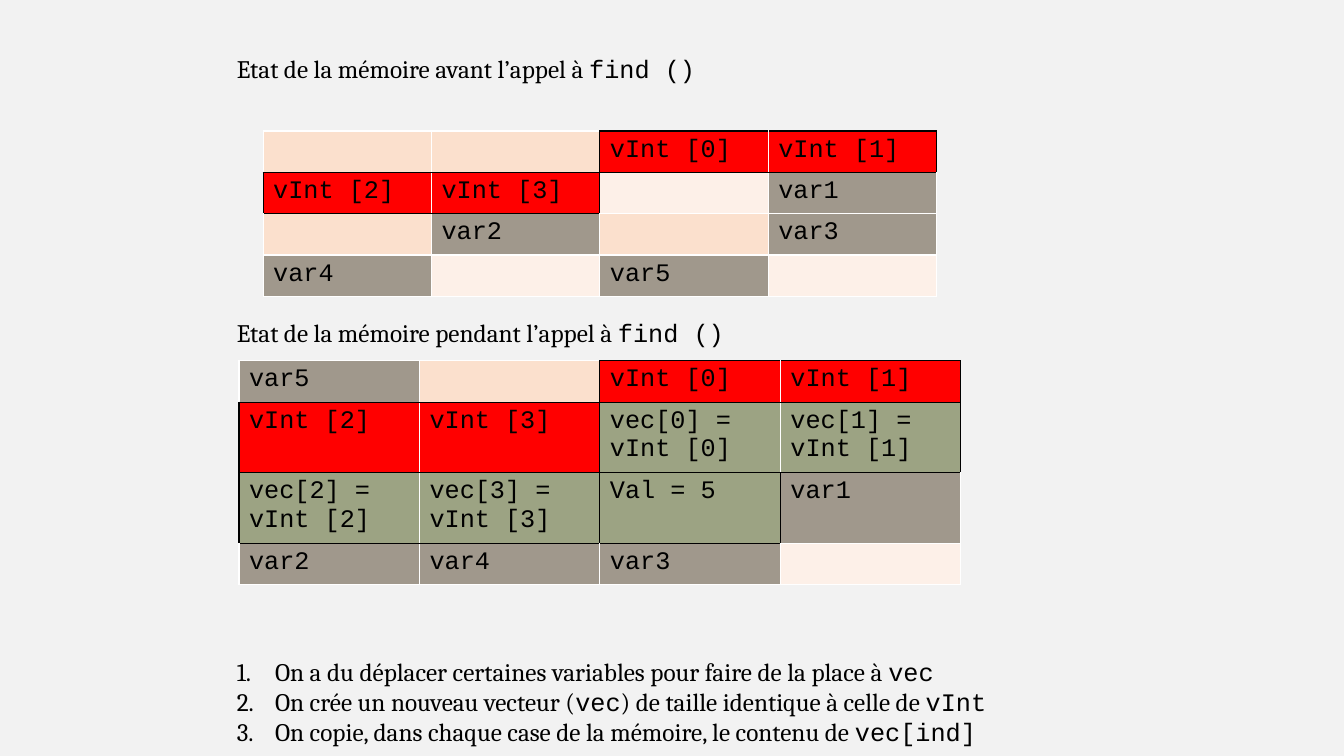
from pptx import Presentation
from pptx.dml.color import RGBColor
from pptx.enum.text import MSO_AUTO_SIZE
from pptx.oxml.ns import qn
from pptx.util import Inches, Pt
from lxml.etree import SubElement

BODY, CODE = "Cambria", "Courier New"
BLACK, WHITE = "000000", "FFFFFF"
EMPTY_FILLS = ("FBE0CD", "FDF0E8")  # alternating rows
GROUP_FILLS = {"vInt": "FF0000", "vec": "9CA383", "Val": "9CA383"}
VARIABLE_FILL = "A0988C"


def color(value):
    return RGBColor.from_string(value)


def group_of(cells, row, column):
    """Name of the outlined memory block a cell belongs to, if any."""
    if not (0 <= row < len(cells) and 0 <= column < len(cells[0])):
        return None
    return next((name for name in GROUP_FILLS if cells[row][column].startswith(name)), None)


class MemorySlide:
    def __init__(self, presentation, size=18):
        self.size = size
        self.slide = presentation.slides.add_slide(presentation.slide_layouts[6])
        self.slide.background.fill.solid()
        self.slide.background.fill.fore_color.rgb = color("F2F2F2")

    def add_run(self, paragraph, text, font):
        run = paragraph.add_run()
        run.text = text
        run.font.name = font
        run.font.size = Pt(self.size)
        run.font.color.rgb = color(BLACK)

    def add_text(self, left, top, width, height, paragraphs, numbered=False):
        """Each paragraph alternates body text and code."""
        shape = self.slide.shapes.add_textbox(
            Inches(left), Inches(top), Inches(width), Inches(height))
        frame = shape.text_frame
        frame.word_wrap = True
        frame.auto_size = MSO_AUTO_SIZE.SHAPE_TO_FIT_TEXT
        for index, texts in enumerate(paragraphs):
            paragraph = frame.add_paragraph() if index else frame.paragraphs[0]
            for position, text in enumerate(texts):
                self.add_run(paragraph, text, (BODY, CODE)[position % 2])
            if numbered:
                self.add_number(paragraph)

    def add_number(self, paragraph):
        properties = paragraph._p.get_or_add_pPr()
        properties.set("marL", str(Inches(0.38)))
        properties.set("indent", str(-Inches(0.38)))
        SubElement(properties, qn("a:buFont"), typeface=BODY)
        SubElement(properties, qn("a:buAutoNum"), type="arabicPeriod")

    def add_border(self, cell, side, value):
        line = SubElement(cell._tc.get_or_add_tcPr(), qn("a:ln" + side), w=str(Pt(1)))
        fill = SubElement(line, qn("a:solidFill"))
        SubElement(fill, qn("a:srgbClr"), val=value)

    def add_memory(self, left, top, column_width, row_heights, cells):
        frame = self.slide.shapes.add_table(
            len(cells), len(cells[0]), Inches(left), Inches(top),
            Inches(column_width * len(cells[0])), Inches(sum(row_heights)))
        table = frame.table
        table.first_row = table.horz_banding = False
        for column in table.columns:
            column.width = Inches(column_width)
        for row, height in zip(table.rows, row_heights):
            row.height = Inches(height)
        for row, texts in enumerate(cells):
            for column, text in enumerate(texts):
                self.fill_cell(table.cell(row, column), cells, row, column, text)

    def fill_cell(self, cell, cells, row, column, text):
        group = group_of(cells, row, column)
        # Black edges wherever two memory blocks meet
        for side, down, right in (("L", 0, -1), ("R", 0, 1), ("T", -1, 0), ("B", 1, 0)):
            neighbour = group_of(cells, row + down, column + right)
            self.add_border(cell, side, WHITE if neighbour == group else BLACK)
        cell.fill.solid()
        fill = GROUP_FILLS.get(group, VARIABLE_FILL) if text else EMPTY_FILLS[row % 2]
        cell.fill.fore_color.rgb = color(fill)
        if text:
            self.add_run(cell.text_frame.paragraphs[0], text, CODE)


def main():
    presentation = Presentation()
    presentation.slide_width = Inches(13.33)
    presentation.slide_height = Inches(7.5)
    memory = MemorySlide(presentation)

    # Memory before the call
    memory.add_text(2.25, 0.48, 7.02, 0.4,
                    [("Etat de la mémoire avant l’appel à ", "find ()")])
    memory.add_memory(2.61, 1.3, 1.67, [0.41] * 4, [
        ["", "", "vInt [0]", "vInt [1]"],
        ["vInt [2]", "vInt [3]", "", "var1"],
        ["", "var2", "", "var3"],
        ["var4", "", "var5", ""],
    ])

    # Memory during the call
    memory.add_text(2.25, 3.1, 7.02, 0.4,
                    [("Etat de la mémoire pendant l’appel à ", "find ()")])
    memory.add_memory(2.37, 3.58, 1.79, [0.41, 0.7, 0.7, 0.41], [
        ["var5", "", "vInt [0]", "vInt [1]"],
        ["vInt [2]", "vInt [3]", "vec[0] = vInt [0]", "vec[1] = vInt [1]"],
        ["vec[2] = vInt [2]", "vec[3] = vInt [3]", "Val = 5", "var1"],
        ["var2", "var4", "var3", ""],
    ])

    # Numbered steps
    memory.add_text(2.25, 6.46, 8.45, 1.01, [
        ("On a du déplacer certaines variables pour faire de la place à ", "vec"),
        ("On crée un nouveau vecteur (", "vec", ") de taille identique à celle de ", "vInt"),
        ("On copie, dans chaque case de la mémoire, le contenu de ", "vec[ind]"),
    ], numbered=True)

    presentation.save("out.pptx")


if __name__ == "__main__":
    main()
